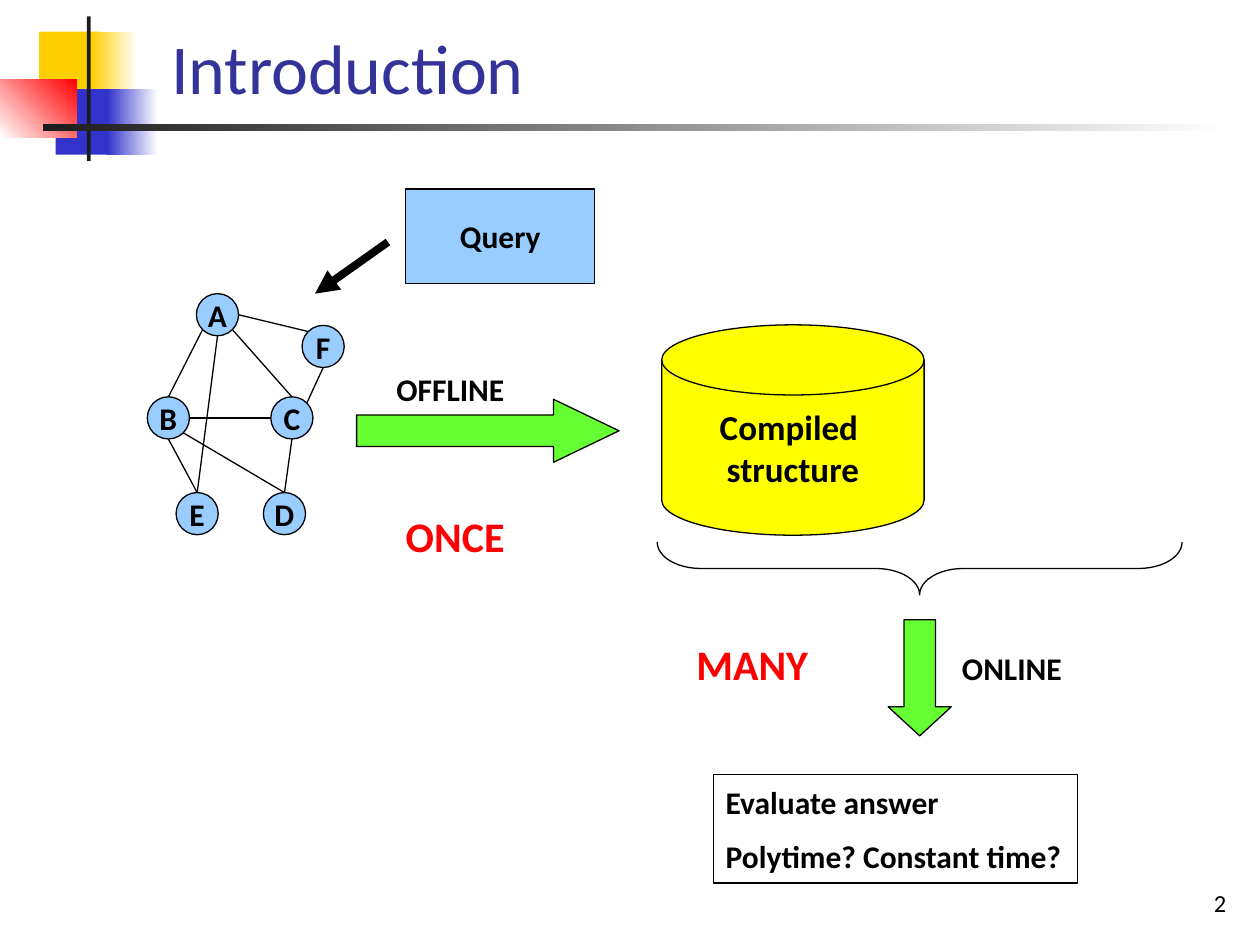
from lxml import etree
from pptx import Presentation
from pptx.dml.color import RGBColor
from pptx.enum.shapes import MSO_CONNECTOR, MSO_SHAPE
from pptx.enum.text import MSO_ANCHOR, MSO_AUTO_SIZE, PP_ALIGN
from pptx.oxml.ns import qn
from pptx.util import Cm, Pt

STRAIGHT = MSO_CONNECTOR.STRAIGHT
RECTANGLE, OVAL = MSO_SHAPE.RECTANGLE, MSO_SHAPE.OVAL
DISK, BRACE, ARROW = MSO_SHAPE.FLOWCHART_MAGNETIC_DISK, MSO_SHAPE.LEFT_BRACE, MSO_SHAPE.RIGHT_ARROW
TOP, MIDDLE, BOTTOM = MSO_ANCHOR.TOP, MSO_ANCHOR.MIDDLE, MSO_ANCHOR.BOTTOM
LEFT, CENTER, RIGHT = PP_ALIGN.LEFT, PP_ALIGN.CENTER, PP_ALIGN.RIGHT
GROW = MSO_AUTO_SIZE.SHAPE_TO_FIT_TEXT

BLACK, RED, WHITE = "000000", "FF0000", "FFFFFF"
SKY, GREEN, YELLOW = "99CCFF", "66FF33", "FFFF00"
GOLD, BLUE, CHARCOAL, NAVY = "FFCF01", "3333CC", "1C1C1C", "333399"

NODE_SIZE = 0.85
NODES = {"A": (0.99, 0), "B": (0, 2.08), "C": (2.49, 2.08),
         "D": (2.34, 4.01), "E": (0.58, 4.01), "F": (3.12, 0.64)}
DIAGONAL = 0.71
SIDES = {"n": (0, -1), "s": (0, 1), "w": (-1, 0), "e": (1, 0),
         "nw": (-DIAGONAL, -DIAGONAL), "ne": (DIAGONAL, -DIAGONAL),
         "sw": (-DIAGONAL, DIAGONAL), "se": (DIAGONAL, DIAGONAL)}
EDGES = [("A", "sw", "B", "n"), ("A", "se", "C", "n"), ("B", "se", "D", "n"),
         ("C", "s", "D", "n"), ("F", "nw", "A", "e"), ("A", "s", "E", "n"),
         ("F", "s", "C", "ne"), ("B", "e", "C", "w"), ("B", "s", "E", "n")]


def color(value):
    """Return the colour for a hex string."""
    return RGBColor.from_string(value)


def apply(target, values):
    """Set each attribute named in values on the target."""
    for name, value in values.items():
        setattr(target, name, value)


def inside(box, left, top, width, height):
    """Return a box placed relative to the corner of another one."""
    return box[0] + left, box[1] + top, width, height


def write(shape, lines, size=18, ink=BLACK, bold=True, align=CENTER, anchor=TOP,
          gap=0, **frame_values):
    """Write one paragraph for each line into the shape."""
    frame = shape.text_frame
    apply(frame, {"word_wrap": False, "vertical_anchor": anchor, **frame_values})
    for index, line in enumerate(lines):
        para = frame.add_paragraph() if index else frame.paragraphs[0]
        apply(para, {"alignment": align, "space_before": Pt(gap if index else 0)})
        span = para.add_run()
        span.text = line
        apply(span.font, {"name": "Calibri", "size": Pt(size), "bold": bold})
        span.font.color.rgb = color(ink)


def add_text(page, box, text, **values):
    """Add a text box with a single line."""
    write(page.shapes.add_textbox(*map(Cm, box)), [text], **values)


def add_block(page, kind, box, fill=None, outline=BLACK, adjust=(), rotation=0):
    """Add a preset shape with a plain fill and a thin outline."""
    shape = page.shapes.add_shape(kind, *map(Cm, box))
    shape.shadow.inherit = False
    shape.rotation = rotation
    for index, value in enumerate(adjust):
        shape.adjustments[index] = value
    if fill:
        shape.fill.solid()
        shape.fill.fore_color.rgb = color(fill)
    else:
        shape.fill.background()
    if outline:
        shape.line.color.rgb = color(outline)
        shape.line.width = Pt(0.75)
    else:
        shape.line.fill.background()
    return shape


def add_fade(page, box, start, end, angle=0):
    """Add a borderless rectangle that fades between two colours."""
    fill = add_block(page, RECTANGLE, box, outline=None).fill
    fill.gradient()
    fill.gradient_angle = angle
    for stop, value in zip(fill.gradient_stops, (start, end)):
        stop.color.rgb = color(value)


def add_line(page, start, end, width=0.75, arrow=False):
    """Add a straight black line, with an arrowhead at its end if wanted."""
    line = page.shapes.add_connector(STRAIGHT, *map(Cm, (*start, *end)))
    line.line.color.rgb = color(BLACK)
    line.line.width = Pt(width)
    properties = line.element.spPr
    if arrow:
        etree.SubElement(properties.find(qn("a:ln")), qn("a:tailEnd"), type="triangle")
    etree.SubElement(properties, qn("a:effectLst"))


def build_header(page, box):
    """Place the coloured squares, the rules and the title."""
    add_block(page, RECTANGLE, inside(box, 0.79, 0.64, 1.22, 1.32), GOLD, None)
    add_fade(page, inside(box, 1.85, 0.64, 0.91, 1.32), GOLD, WHITE)
    add_block(page, RECTANGLE, inside(box, 1.12, 1.8, 1.17, 1.32), BLUE, None)
    add_fade(page, inside(box, 2.16, 1.8, 1.02, 1.32), BLUE, WHITE)
    add_fade(page, inside(box, 0, 1.6, 1.54, 1.17), WHITE, RED, 45)
    add_block(page, RECTANGLE, inside(box, 1.75, 0.33, 0.08, 2.92), CHARCOAL, None)
    add_fade(page, inside(box, 0.86, 2.51, 23.9, 0.13), CHARCOAL, WHITE)
    add_text(page, inside(box, 3.2, 0.58, 21.64, 1.73), "Introduction", size=40,
             ink=NAVY, bold=False, align=LEFT, anchor=BOTTOM, word_wrap=True)


def build_graph(page, box):
    """Draw the lettered nodes and the edges between them."""
    radius = NODE_SIZE / 2

    def point(name, side):
        """Return the place on the rim of a node."""
        return tuple(corner + offset + radius * (1 + step) for corner, offset, step
                     in zip(box, NODES[name], SIDES[side]))

    for name, offset in NODES.items():
        node = add_block(page, OVAL, inside(box, *offset, NODE_SIZE, NODE_SIZE), SKY)
        write(node, [name], anchor=MIDDLE)
    for first, leaving, second, entering in EDGES:
        add_line(page, point(first, leaving), point(second, entering))


def build_query(page, box):
    """Place the query box and the arrow towards the graph."""
    query = add_block(page, RECTANGLE, inside(box, 1.83, 0, 3.81, 1.91), SKY)
    write(query, ["Query"], anchor=MIDDLE)
    left, top = box[:2]
    add_line(page, (left + 1.47, top + 1.07), (left, top + 2.11), 4.5, arrow=True)


def build_offline(page, box):
    """Place the offline arrow with its two labels."""
    add_block(page, ARROW, inside(box, 0, 0.71, 5.29, 1.27), GREEN, adjust=(0.5, 1.04))
    add_text(page, inside(box, 0.53, 0, 2.72, 1.02), "OFFLINE", auto_size=GROW)
    add_text(page, inside(box, 0.73, 2.82, 2.51, 1.27), "ONCE", size=24, ink=RED,
             auto_size=GROW)


def build_store(page, box):
    """Place the compiled structure and the brace below it."""
    disk = add_block(page, DISK, inside(box, 0, 0, 5.29, 4.24), YELLOW)
    write(disk, ["Compiled ", "structure"], size=20, anchor=MIDDLE)
    add_block(page, BRACE, inside(box, 4.67, -0.38, 1.06, 10.58),
              adjust=(0.83, 0.5), rotation=270)


def build_online(page, box):
    """Place the online arrow, its labels and the answer box."""
    add_text(page, inside(box, 0, 0, 2.79, 1.27), "MANY", size=24, ink=RED,
             auto_size=GROW)
    add_block(page, ARROW, inside(box, 3.6, 0.28, 2.34, 1.27), GREEN,
              adjust=(0.5, 0.46), rotation=90)
    add_text(page, inside(box, 5.36, 0.2, 2.54, 1.02), "ONLINE", auto_size=GROW)
    answer = add_block(page, RECTANGLE, inside(box, 0.61, 2.87, 7.34, 2.18))
    write(answer, ["Evaluate answer", "Polytime? Constant time?"], align=LEFT,
          anchor=MIDDLE, gap=9, auto_size=GROW)


def build_footer(page, box):
    """Place the slide number."""
    add_text(page, box, "2", size=14, bold=False, align=RIGHT, anchor=BOTTOM,
             word_wrap=True)


def main():
    """Build the slide and save it."""
    deck = Presentation()
    apply(deck, {"slide_width": Cm(25.4), "slide_height": Cm(19.05)})
    page = deck.slides.add_slide(deck.slide_layouts[6])
    build_header(page, (0, 0, 25.4, 3.25))
    build_graph(page, (2.97, 5.92, 3.97, 4.86))
    build_store(page, (13.34, 6.55, 10.58, 5.46))
    build_offline(page, (7.19, 7.34, 5.29, 4.09))
    build_online(page, (13.77, 12.75, 7.95, 5.05))
    build_query(page, (6.35, 3.81, 5.64, 2.11))
    build_footer(page, (19.69, 17.35, 5.28, 1.27))
    deck.save("out.pptx")


if __name__ == "__main__":
    main()
